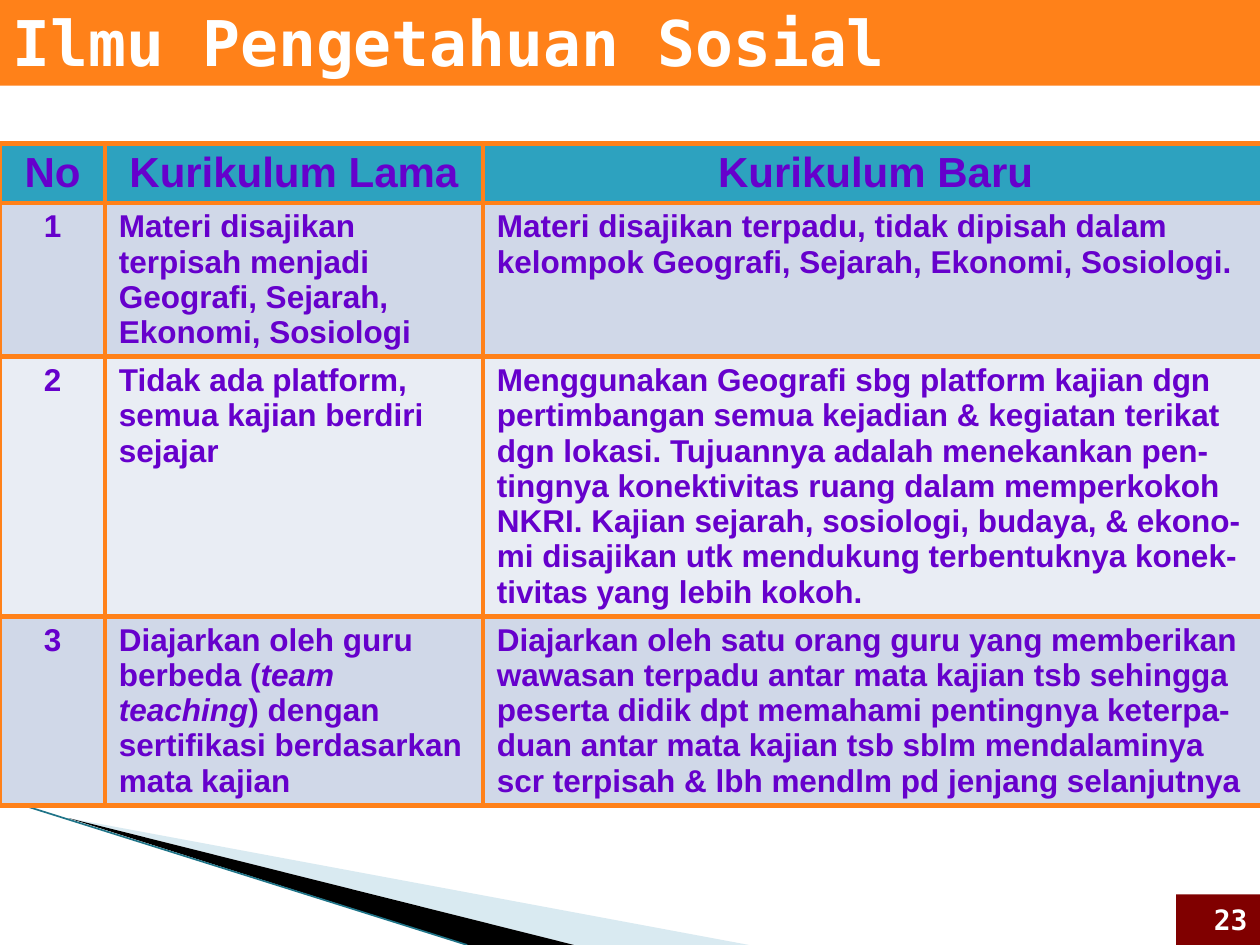
from dataclasses import dataclass

from lxml.etree import SubElement
from pptx import Presentation
from pptx.dml.color import RGBColor
from pptx.enum.shapes import MSO_CONNECTOR, MSO_SHAPE
from pptx.enum.text import MSO_ANCHOR, MSO_AUTO_SIZE, PP_ALIGN
from pptx.oxml import parse_xml
from pptx.oxml.ns import nsdecls, qn
from pptx.util import Pt


@dataclass(frozen=True)
class Theme:
    orange: str = "FF8119"
    teal: str = "2DA2BF"
    purple: str = "6600CC"
    maroon: str = "800000"
    white: str = "FFFFFF"
    black: str = "000000"
    mist: str = "A0CBDC"
    edge: str = "1F7488"
    bands: tuple = ("D0D8E8", "E9EDF4")
    mono: str = "DejaVu Sans Mono"
    sans: str = "Arial"
    title: int = 36
    head: int = 24
    body: int = 18
    page: int = 16


THEME = Theme()

HEADS = ("No", "Kurikulum Lama", "Kurikulum Baru")
# Each cell is a list of runs; every second run is italic.
ROWS = (
    (["1"],
     ["Materi disajikan terpisah menjadi Geografi, Sejarah, Ekonomi, Sosiologi"],
     ["Materi disajikan terpadu, tidak dipisah dalam kelompok Geografi, "
      "Sejarah, Ekonomi, Sosiologi."]),
    (["2"],
     ["Tidak ada platform, semua kajian berdiri sejajar"],
     ["Menggunakan Geografi sbg platform kajian dgn pertimbangan semua "
      "kejadian & kegiatan terikat dgn lokasi. Tujuannya adalah menekankan "
      "pen-tingnya konektivitas ruang dalam memperkokoh NKRI. Kajian sejarah, "
      "sosiologi, budaya, & ekono-mi disajikan utk mendukung terbentuknya "
      "konek-tivitas yang lebih kokoh."]),
    (["3"],
     ["Diajarkan oleh guru berbeda (", "team teaching",
      ") dengan sertifikasi berdasarkan mata kajian"],
     ["Diajarkan oleh satu orang guru yang memberikan wawasan terpadu antar "
      "mata kajian tsb sehingga peserta didik dpt memahami pentingnya "
      "keterpa-duan antar mata kajian tsb sblm mendalaminya scr terpisah & "
      "lbh mendlm pd jenjang selanjutnya"]),
)
COLS = (60, 216, 448.8)
TALLS = (34, 87.5, 148, 108)


def paint(part, color):
    part.fill.solid()
    part.fill.fore_color.rgb = RGBColor.from_string(color)


def style(para, face, size, color, align):
    para.alignment = align
    font = para.font
    font.name, font.size, font.bold = face, Pt(size), True
    font.color.rgb = RGBColor.from_string(color)


def place(part, box):
    part.left, part.top, part.width, part.height = map(Pt, box)


def rule(cell):
    """Draw all four borders of a cell; they must precede its fill."""
    props = cell._tc.get_or_add_tcPr()
    for side in ("lnL", "lnR", "lnT", "lnB"):
        props.append(parse_xml(
            f'<a:{side} {nsdecls("a")} w="{Pt(3)}"><a:solidFill>'
            f'<a:srgbClr val="{THEME.orange}"/></a:solidFill></a:{side}>'))


def add_title(slide, box):
    title = slide.shapes.title
    place(title, box)
    paint(title, THEME.orange)
    frame = title.text_frame
    frame.text = "Ilmu Pengetahuan Sosial"
    frame.auto_size = MSO_AUTO_SIZE.NONE
    frame.vertical_anchor = MSO_ANCHOR.MIDDLE
    style(frame.paragraphs[0], THEME.mono, THEME.title, THEME.white, PP_ALIGN.LEFT)


def add_wedge(slide, points, color, alpha=None):
    build = slide.shapes.build_freeform(Pt(points[0][0]), Pt(points[0][1]))
    build.add_line_segments([(Pt(x), Pt(y)) for x, y in points[1:]])
    wedge = build.convert_to_shape()
    wedge.shadow.inherit = False
    wedge.line.fill.background()
    paint(wedge, color)
    if alpha:
        tint = wedge._element.spPr.find(".//" + qn("a:srgbClr"))
        SubElement(tint, qn("a:alpha"), val=str(alpha * 1000))


def add_swoosh(slide, box):
    left, top, width, height = box
    tip, base = (left + 39, top + 11.5), top + height
    add_wedge(slide, (tip, (left + width, base), (left + 328, base)), THEME.mist, 40)
    add_wedge(slide, (tip, (left + 328, base), (left + 267, base)), THEME.black)
    line = slide.shapes.add_connector(
        MSO_CONNECTOR.STRAIGHT, Pt(left), Pt(top), Pt(left + 267), Pt(base))
    line.line.width = Pt(0.95)
    line.line.color.rgb = RGBColor.from_string(THEME.edge)
    SubElement(line._element.spPr, qn("a:effectLst"))


def fill_cell(cell, runs, size, align, color):
    rule(cell)
    paint(cell, color)
    cell.margin_left = cell.margin_right = Pt(8)
    cell.margin_top = cell.margin_bottom = Pt(3.6)
    para = cell.text_frame.paragraphs[0]
    for i, text in enumerate(runs):
        run = para.add_run()
        run.text = text
        if i % 2:
            run.font.italic = True
    style(para, THEME.sans, size, THEME.purple, align)


def add_grid(slide, box):
    grid = slide.shapes.add_table(len(ROWS) + 1, len(COLS), *map(Pt, box)).table
    for col, width in zip(grid.columns, COLS):
        col.width = Pt(width)
    for row, tall in zip(grid.rows, TALLS):
        row.height = Pt(tall)
    # Header row
    for c, text in enumerate(HEADS):
        fill_cell(grid.cell(0, c), [text], THEME.head, PP_ALIGN.CENTER, THEME.teal)
    # Banded body rows
    for r, row in enumerate(ROWS):
        for c, runs in enumerate(row):
            align = PP_ALIGN.LEFT if c else PP_ALIGN.CENTER
            fill_cell(grid.cell(r + 1, c), runs, THEME.body, align, THEME.bands[r % 2])


def add_page(slide, box):
    page = slide.shapes.add_shape(MSO_SHAPE.RECTANGLE, *map(Pt, box))
    page.shadow.inherit = False
    page.line.fill.background()
    paint(page, THEME.maroon)
    frame = page.text_frame
    frame.text = "23"
    frame.vertical_anchor = MSO_ANCHOR.MIDDLE
    style(frame.paragraphs[0], THEME.mono, THEME.page, THEME.white, PP_ALIGN.RIGHT)


def main():
    deck = Presentation()
    deck.slide_width, deck.slide_height = Pt(720), Pt(540)
    slide = deck.slides.add_slide(deck.slide_layouts[5])
    add_swoosh(slide, (0, 456, 428, 84))
    add_title(slide, (0, -2, 720, 51))
    add_grid(slide, (0, 82, sum(COLS), sum(TALLS)))
    add_page(slide, (672, 511, 48, 29))
    deck.save("out.pptx")


if __name__ == "__main__":
    main()
